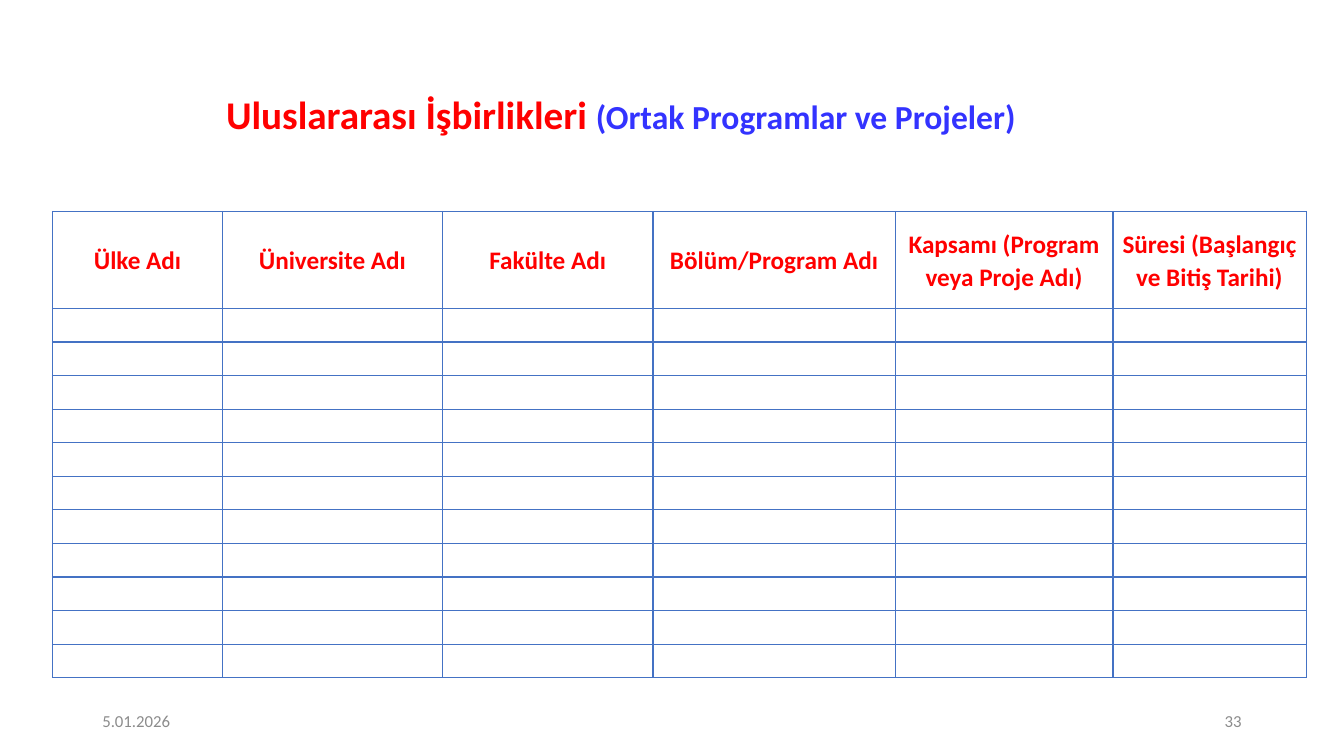
from lxml import etree
from pptx import Presentation
from pptx.dml.color import RGBColor
from pptx.enum.text import MSO_ANCHOR, PP_ALIGN
from pptx.oxml.ns import qn
from pptx.util import Pt

MIDDLE = MSO_ANCHOR.MIDDLE
LEFT, CENTER, RIGHT = PP_ALIGN.LEFT, PP_ALIGN.CENTER, PP_ALIGN.RIGHT
FONT = "Calibri"
RED, BLUE, GRAY, BORDER = "FF0000", "3333FF", "8C8C8C", "4472C4"
COLUMNS = [
    ("Ülke Adı", 121.5),
    ("Üniversite Adı", 157),
    ("Fakülte Adı", 150.5),
    ("Bölüm/Program Adı", 173),
    ("Kapsamı (Program veya Proje Adı)", 155.5),
    ("Süresi (Başlangıç ve Bitiş Tarihi)", 138),
]
EMPTY_ROWS = 11
HEADER_HEIGHT, ROW_HEIGHT = 69.3, 24


def rgb(value):
    """Turn a hex string into a colour."""
    return RGBColor.from_string(value)


def add_run(p, text, size, color, bold=False):
    """Append one formatted run to a paragraph."""
    r = p.add_run()
    r.text = text
    r.font.name = FONT
    r.font.size = Pt(size)
    r.font.bold = bold
    r.font.color.rgb = rgb(color)


def add_text(s, left, top, width, height, align, runs, spacing=1.0):
    """Add a one-paragraph text box, centred vertically."""
    sp = s.shapes.add_textbox(Pt(left), Pt(top), Pt(width), Pt(height))
    tf = sp.text_frame
    tf.word_wrap = True
    tf.vertical_anchor = MIDDLE
    p = tf.paragraphs[0]
    p.alignment = align
    p.line_spacing = spacing
    for run in runs:
        add_run(p, *run)


def style_cell(cell):
    """Give a cell no margins, no fill and a thin border on each side."""
    cell.margin_left = cell.margin_right = 0
    cell.margin_top = cell.margin_bottom = 0
    cell.vertical_anchor = MIDDLE
    tcPr = cell._tc.get_or_add_tcPr()
    for side in ("a:lnL", "a:lnR", "a:lnT", "a:lnB"):
        ln = etree.SubElement(tcPr, qn(side), w=str(Pt(1)))
        fill = etree.SubElement(ln, qn("a:solidFill"))
        etree.SubElement(fill, qn("a:srgbClr"), val=BORDER)
    cell.fill.background()


def add_grid(s, left, top):
    """Add the table with its header row and empty rows."""
    width = sum(w for _, w in COLUMNS)
    height = HEADER_HEIGHT + EMPTY_ROWS * ROW_HEIGHT
    table = s.shapes.add_table(EMPTY_ROWS + 1, len(COLUMNS), Pt(left), Pt(top),
                               Pt(width), Pt(height)).table
    table.horz_banding = False
    for i, row in enumerate(table.rows):
        row.height = Pt(ROW_HEIGHT if i else HEADER_HEIGHT)
    for cell in table.iter_cells():
        style_cell(cell)
    for i, (heading, col_width) in enumerate(COLUMNS):
        table.columns[i].width = Pt(col_width)
        p = table.cell(0, i).text_frame.paragraphs[0]
        p.alignment = CENTER
        p.line_spacing = 1.07
        add_run(p, heading, 18, RED, True)


def main():
    """Build the slide and save it."""
    prs = Presentation()
    prs.slide_width, prs.slide_height = Pt(960), Pt(540)
    s = prs.slides.add_slide(prs.slide_layouts[6])
    add_text(s, 37.5, 60.5, 812, 45.4, CENTER, [
        ("Uluslararası İşbirlikleri ", 28, RED, True),
        ("(Ortak Programlar ve Projeler)", 24, BLUE, True),
    ], 0.9)
    add_text(s, 66, 500.5, 216, 28.75, LEFT, [("5.01.2026", 12, GRAY)])
    add_text(s, 678, 500.5, 216, 28.75, RIGHT, [("33", 12, GRAY)])
    add_grid(s, 37.5, 151)
    prs.save("out.pptx")


if __name__ == "__main__":
    main()
